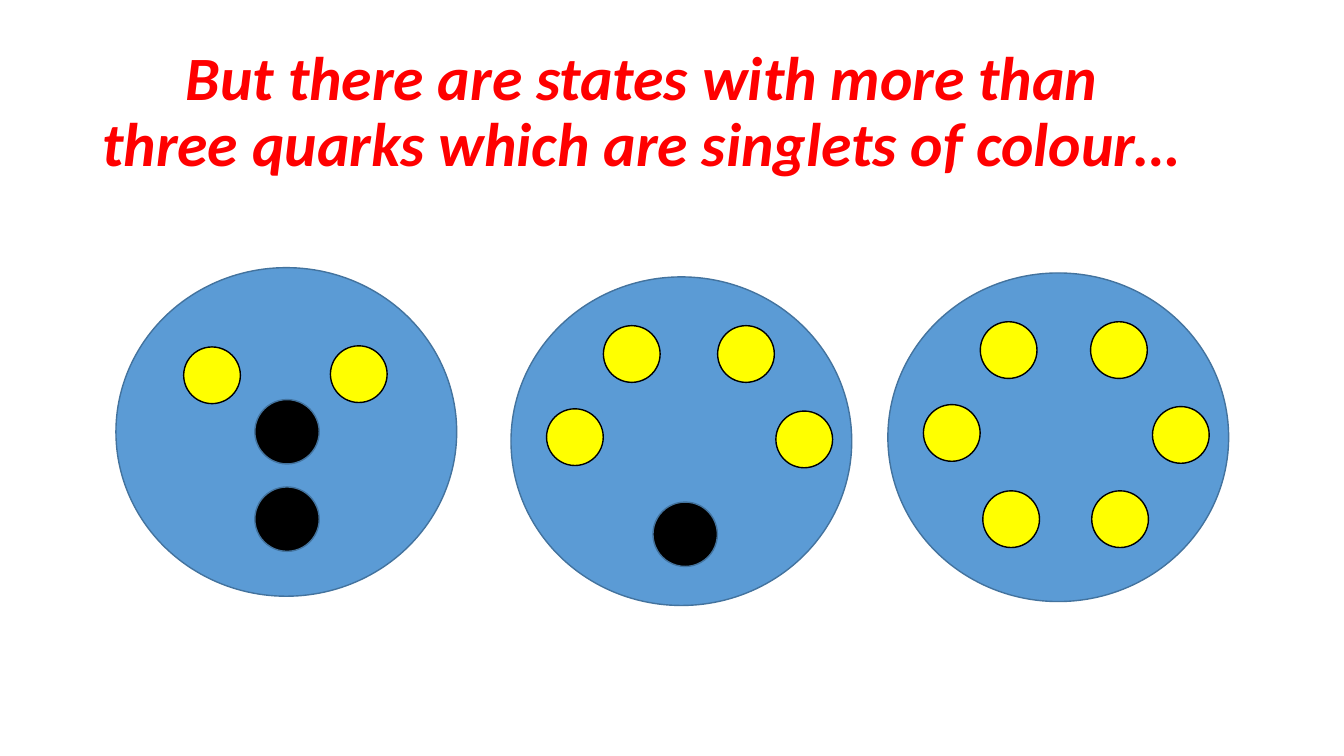
from dataclasses import dataclass

from pptx import Presentation
from pptx import util as u
from pptx.dml.color import RGBColor
from pptx.enum import shapes, text
from pptx.shapes.group import GroupShape
from pptx.slide import Slide


@dataclass(frozen=True)
class Theme:
    font: str = "Calibri"
    size: float = 44
    title: str = "FF0000"
    bag: str = "5B9BD5"
    rim: str = "43739E"
    quark: str = "FFFF00"
    anti: str = "000000"
    edge: str = "000000"


@dataclass(frozen=True)
class Kind:
    wide: float
    high: float
    fill: str
    line: str


@dataclass(frozen=True)
class Dot:
    kind: Kind
    x: float
    y: float


@dataclass(frozen=True)
class State:
    x: float
    y: float
    dots: tuple[Dot, ...]


THEME = Theme()
BAG = Kind(243.4, 234.7, THEME.bag, THEME.rim)
QUARK = Kind(40.5, 40.5, THEME.quark, THEME.edge)
ANTI = Kind(46, 46, THEME.anti, THEME.rim)

# Dots are placed from the top left corner of their bag.
STATES = (
    State(82.8, 191.2, (
        Dot(ANTI, 99.2, 94.2), Dot(QUARK, 153.2, 55.8),
        Dot(QUARK, 48.4, 56.6), Dot(ANTI, 99.2, 156.6))),
    State(365, 197.8, (
        Dot(QUARK, 189.2, 95.8), Dot(QUARK, 25.4, 94.2),
        Dot(ANTI, 101.4, 160.8), Dot(QUARK, 147.6, 34.8),
        Dot(QUARK, 66, 34.8))),
    State(634.2, 195, (
        Dot(QUARK, 189, 95.4), Dot(QUARK, 25.4, 94),
        Dot(QUARK, 144.8, 34.8), Dot(QUARK, 66, 34.8),
        Dot(QUARK, 67.8, 155.6), Dot(QUARK, 145.6, 155.6))),
)


def add_disc(group: GroupShape, kind: Kind, x: float, y: float) -> None:
    disc = group.shapes.add_shape(
        shapes.MSO_SHAPE.OVAL,
        u.Pt(x), u.Pt(y), u.Pt(kind.wide), u.Pt(kind.high))
    disc.shadow.inherit = False
    disc.fill.solid()
    disc.fill.fore_color.rgb = RGBColor.from_string(kind.fill)
    disc.line.color.rgb = RGBColor.from_string(kind.line)
    disc.line.width = u.Pt(1)


def add_state(slide: Slide, state: State) -> None:
    group = slide.shapes.add_group_shape()
    add_disc(group, BAG, state.x, state.y)
    for dot in state.dots:
        add_disc(group, dot.kind, state.x + dot.x, state.y + dot.y)


def add_title(slide: Slide, words: str) -> None:
    box = slide.shapes.add_textbox(
        u.Pt(66), u.Pt(28.8), u.Pt(828), u.Pt(104.4))
    frame = box.text_frame
    frame.word_wrap = True
    frame.vertical_anchor = text.MSO_ANCHOR.MIDDLE
    frame.text = words
    para = frame.paragraphs[0]
    para.alignment = text.PP_ALIGN.LEFT
    para.line_spacing = 0.9
    # Only the first line is set in from the left.
    props = para._p.get_or_add_pPr()
    props.set("marL", "0")
    props.set("indent", str(u.Pt(59.7)))
    font = para.runs[0].font
    font.name = THEME.font
    font.size = u.Pt(THEME.size)
    font.bold = font.italic = True
    font.color.rgb = RGBColor.from_string(THEME.title)


def main() -> None:
    deck = Presentation()
    deck.slide_width, deck.slide_height = u.Pt(960), u.Pt(540)
    slide = deck.slides.add_slide(deck.slide_layouts[6])
    add_title(slide, "But there are states with more than three quarks "
                     "which are singlets of colour…")
    for state in STATES:
        add_state(slide, state)
    deck.save("out.pptx")


if __name__ == "__main__":
    main()
